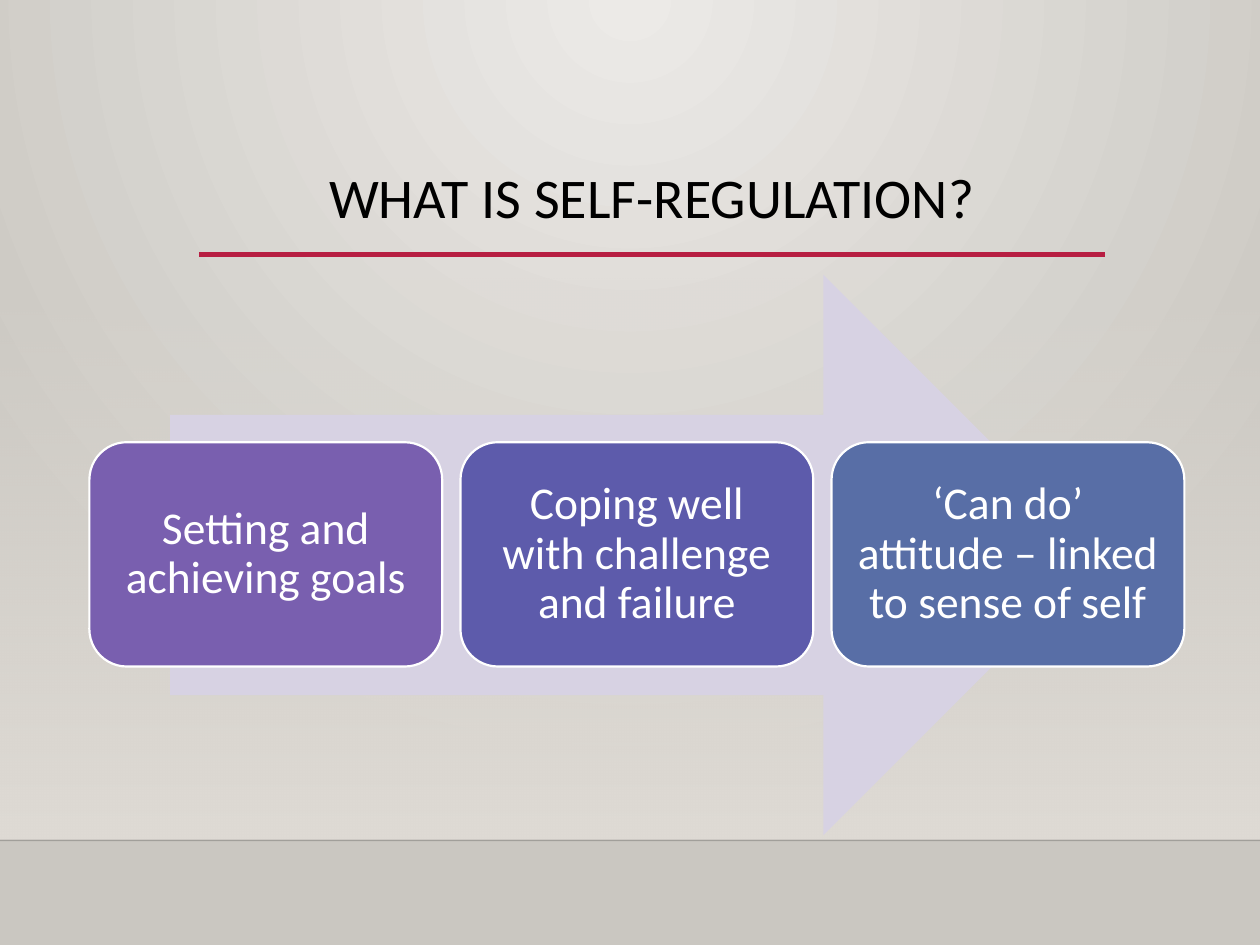
from dataclasses import dataclass

from lxml.etree import SubElement
from pptx import Presentation
from pptx.dml.color import RGBColor
from pptx.enum.shapes import MSO_CONNECTOR, MSO_SHAPE
from pptx.enum.text import MSO_ANCHOR, PP_ALIGN
from pptx.oxml.ns import qn
from pptx.util import Inches, Pt


@dataclass(frozen=True)
class Theme:
    font: str = "Calibri"
    title_size: int = 32
    step_size: int = 26
    text: str = "000000"
    background_inner: str = "ECEAE7"
    background_outer: str = "CAC7C1"
    wall: str = "DFDBD5"
    floor_line: str = "000001"
    accent: str = "B71E42"
    arrow: str = "D7D2E3"
    white: str = "FFFFFF"
    steps: tuple = ("795FAF", "5D5BAB", "586EA6")


THEME = Theme()
STEPS = (
    "Setting and achieving goals",
    "Coping well with challenge and failure",
    "‘Can do’ attitude – linked to sense of self",
)


def rgb(value):
    return RGBColor.from_string(value)


def add_alpha(color_parent, percent):
    color = color_parent.find(".//" + qn("a:srgbClr"))
    SubElement(color, qn("a:alpha")).set("val", str(percent * 1000))


def set_gradient(fill, first, last):
    fill.gradient()
    for stop, color in zip(fill.gradient_stops, (first, last)):
        stop.color.rgb = rgb(color)


def set_background(slide):
    set_gradient(slide.background.fill, THEME.background_inner, THEME.background_outer)
    gradient = slide.element.find(".//" + qn("a:gradFill"))
    gradient.remove(gradient.find(qn("a:lin")))
    # Circular gradient centred on the top edge
    circle = SubElement(gradient, qn("a:path"))
    circle.set("path", "circle")
    focus = SubElement(circle, qn("a:fillToRect"))
    for side, value in (("l", 43), ("t", 0), ("r", 43), ("b", 100)):
        focus.set(side, str(value * 1000))


def add_shape(slide, kind, left, top, width, height, color=None):
    shape = slide.shapes.add_shape(
        kind, Inches(left), Inches(top), Inches(width), Inches(height))
    shape.shadow.inherit = False
    shape.line.fill.background()
    if color:
        shape.fill.solid()
        shape.fill.fore_color.rgb = rgb(color)
    return shape


def add_wall(slide):
    wall = add_shape(slide, MSO_SHAPE.RECTANGLE, 0, 2.2, 10, 4.46)
    set_gradient(wall.fill, THEME.wall, THEME.wall)
    wall.fill.gradient_angle = 270
    add_alpha(wall.element.find(".//" + qn("a:gs")), 0)


def add_rule(slide, left, right, top, color, width):
    rule = slide.shapes.add_connector(
        MSO_CONNECTOR.STRAIGHT, Inches(left), Inches(top), Inches(right), Inches(top))
    rule.line.color.rgb = rgb(color)
    rule.line.width = Pt(width)
    SubElement(rule.element.spPr, qn("a:effectLst"))
    return rule


def write_text(shape, text, size, color, inset):
    frame = shape.text_frame
    frame.word_wrap = True
    frame.vertical_anchor = MSO_ANCHOR.MIDDLE
    frame.margin_left = frame.margin_right = Inches(inset)
    frame.margin_top = frame.margin_bottom = Inches(inset)
    frame.text = text
    paragraph = frame.paragraphs[0]
    paragraph.alignment = PP_ALIGN.CENTER
    paragraph.line_spacing = 0.9
    font = paragraph.runs[0].font
    font.name = THEME.font
    font.size = Pt(size)
    font.color.rgb = rgb(color)


def add_title(slide, text):
    title = slide.shapes.add_textbox(
        Inches(1.58), Inches(1.3), Inches(7.19), Inches(0.58))
    write_text(title, text, THEME.title_size, THEME.text, 0)


def add_step(slide, index, text, color):
    width, gap = 2.8, 0.145
    left = 0.71 + index * (width + gap)
    step = add_shape(slide, MSO_SHAPE.ROUNDED_RECTANGLE, left, 3.51, width, 1.78, color)
    step.line.color.rgb = rgb(THEME.white)
    step.line.width = Pt(1.25)
    write_text(step, text, THEME.step_size, THEME.white, 0.11)


def main():
    presentation = Presentation()
    presentation.slide_width = Inches(10)
    presentation.slide_height = Inches(7.5)
    slide = presentation.slides.add_slide(presentation.slide_layouts[6])

    # Backdrop
    set_background(slide)
    add_wall(slide)
    floor_line = add_rule(slide, 0, 10, 6.67, THEME.floor_line, 1)
    add_alpha(floor_line.element.spPr, 20)

    # Heading
    add_rule(slide, 1.58, 8.77, 2.02, THEME.accent, 2.5)
    add_title(slide, "WHAT IS SELF-REGULATION?")

    # Process arrow with its steps
    add_shape(slide, MSO_SHAPE.RIGHT_ARROW, 1.35, 2.18, 7.41, 4.45, THEME.arrow)
    for index, (text, color) in enumerate(zip(STEPS, THEME.steps)):
        add_step(slide, index, text, color)

    presentation.save("out.pptx")


if __name__ == "__main__":
    main()
